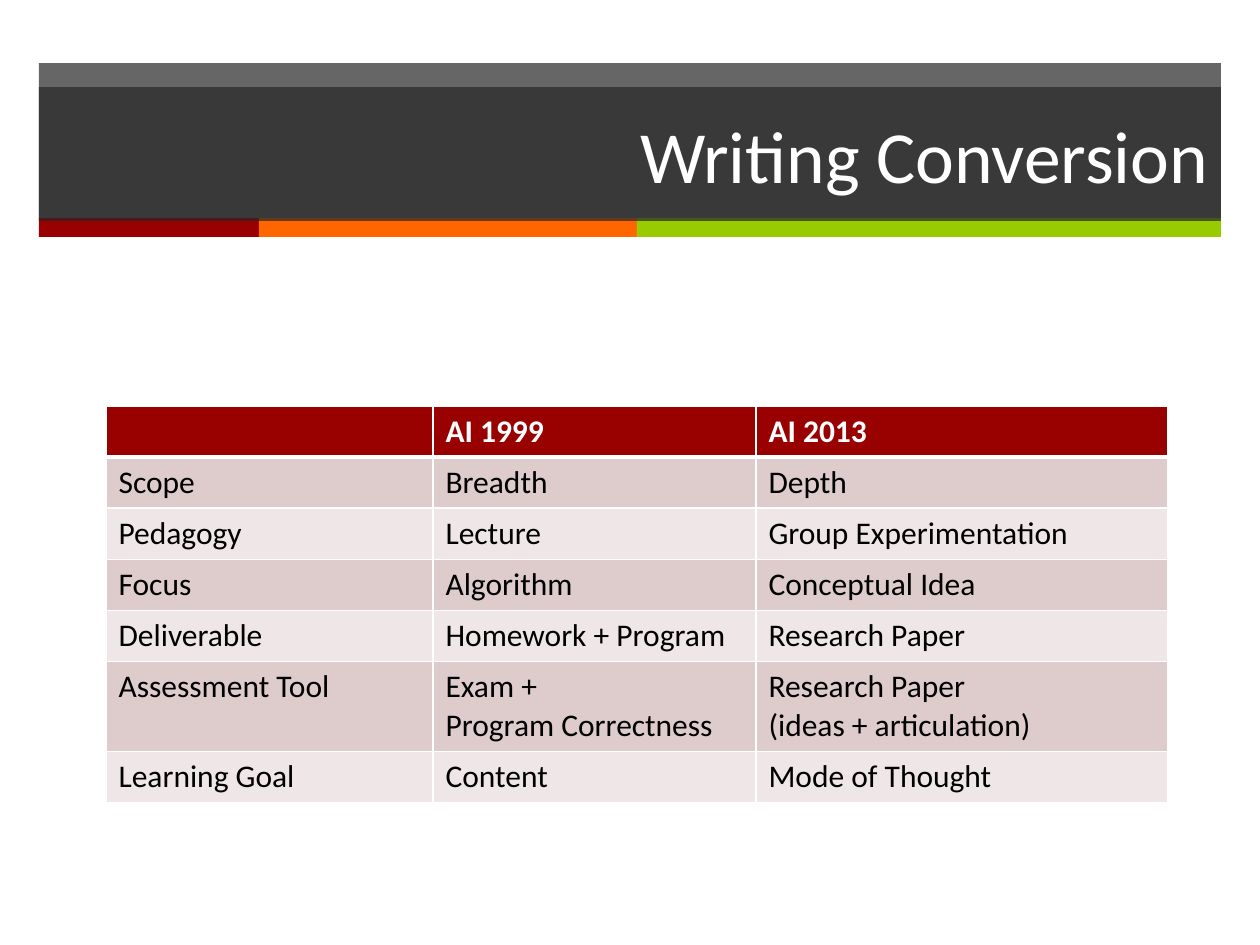
from lxml.etree import SubElement
from pptx import Presentation
from pptx.dml.color import RGBColor
from pptx.enum.shapes import MSO_SHAPE
from pptx.enum.text import MSO_ANCHOR, PP_ALIGN
from pptx.oxml import parse_xml
from pptx.oxml.ns import nsdecls, qn
from pptx.util import Pt

COLORS = {
    "band": "262626", "red": "990000", "orange": "FF6600", "green": "99CC00",
    "odd_row": "DECCCC", "even_row": "EFE7E7", "white": "FFFFFF", "black": "000000",
}
FONT = "Calibri"
TITLE = "Writing Conversion"
BAND_LEFT, BAND_WIDTH = 39, 1182
STRIPES = [("red", 220), ("orange", 378), ("green", 584)]
STRIPE_TOP, STRIPE_HEIGHT = 218, 19

ROWS = [
    ("", "AI 1999", "AI 2013"),
    ("Scope", "Breadth", "Depth"),
    ("Pedagogy", "Lecture", "Group Experimentation"),
    ("Focus", "Algorithm", "Conceptual Idea"),
    ("Deliverable", "Homework + Program", "Research Paper"),
    ("Assessment Tool", "Exam +\nProgram Correctness", "Research Paper\n(ideas + articulation)"),
    ("Learning Goal", "Content", "Mode of Thought"),
]
TABLE_LEFT, TABLE_TOP = 106, 406
COLUMN_WIDTHS = [327, 323, 412]
ROW_HEIGHT, EXTRA_LINE_HEIGHT = 51, 39


def px(length):
    return round(length * 914400 / 126)


def rgb(name):
    return RGBColor.from_string(COLORS[name])


def fill_solid(fill, color, alpha=None):
    fill.solid()
    fill.fore_color.rgb = rgb(color)
    if alpha:
        color_element = fill._xPr.find(qn("a:solidFill"))[0]
        SubElement(color_element, qn("a:alpha"), val=str(alpha * 1000))


def add_bar(slide, left, top, width, height, color, alpha=None):
    shape = slide.shapes.add_shape(
        MSO_SHAPE.RECTANGLE, px(left), px(top), px(width), px(height))
    shape.shadow.inherit = False
    shape.line.fill.background()
    fill_solid(shape.fill, color, alpha)


def write(paragraph, text, size, color, bold=False):
    run = paragraph.add_run()
    run.text = text
    run.font.name = FONT
    run.font.size = Pt(size)
    run.font.bold = bold
    run.font.color.rgb = rgb(color)


def set_borders(cell, widths):
    properties = cell._tc.get_or_add_tcPr()
    for index, (side, width) in enumerate(widths.items()):
        properties.insert(index, parse_xml(
            f'<a:ln{side} {nsdecls("a")} w="{Pt(width)}"><a:solidFill>'
            f'<a:srgbClr val="{COLORS["white"]}"/></a:solidFill></a:ln{side}>'))


def add_header(slide):
    add_bar(slide, BAND_LEFT, 63, BAND_WIDTH, 156, "band", 70)
    left = BAND_LEFT
    for color, width in STRIPES:
        add_bar(slide, left, STRIPE_TOP, width, STRIPE_HEIGHT, color)
        left += width

    title = slide.shapes.title
    title.left, title.top = px(BAND_LEFT), px(87)
    title.width, title.height = px(BAND_WIDTH), px(134)
    fill_solid(title.fill, "band", 70)
    title.text_frame.vertical_anchor = MSO_ANCHOR.MIDDLE
    paragraph = title.text_frame.paragraphs[0]
    paragraph.alignment = PP_ALIGN.RIGHT
    write(paragraph, TITLE, 42, "white")
    slide.shapes._spTree.append(title._element)


def add_comparison(slide):
    heights = [ROW_HEIGHT + EXTRA_LINE_HEIGHT * max(text.count("\n") for text in row)
               for row in ROWS]
    table = slide.shapes.add_table(
        len(ROWS), len(COLUMN_WIDTHS), px(TABLE_LEFT), px(TABLE_TOP),
        px(sum(COLUMN_WIDTHS)), px(sum(heights))).table
    for column, width in zip(table.columns, COLUMN_WIDTHS):
        column.width = px(width)
    for row_index, texts in enumerate(ROWS):
        table.rows[row_index].height = px(heights[row_index])
        header = row_index == 0
        background = "red" if header else "odd_row" if row_index % 2 else "even_row"
        borders = {"L": 1, "R": 1, "T": 3 if row_index == 1 else 1, "B": 3 if header else 1}
        for cell, text in zip(table.rows[row_index].cells, texts):
            fill_solid(cell.fill, background)
            set_borders(cell, borders)
            for line_index, line in enumerate(text.split("\n") if text else []):
                frame = cell.text_frame
                paragraph = frame.add_paragraph() if line_index else frame.paragraphs[0]
                write(paragraph, line, 18, "white" if header else "black", header)


def main():
    presentation = Presentation()
    presentation.slide_width, presentation.slide_height = px(1260), px(945)
    slide = presentation.slides.add_slide(presentation.slide_layouts[5])
    add_header(slide)
    add_comparison(slide)
    presentation.save("out.pptx")


if __name__ == "__main__":
    main()
